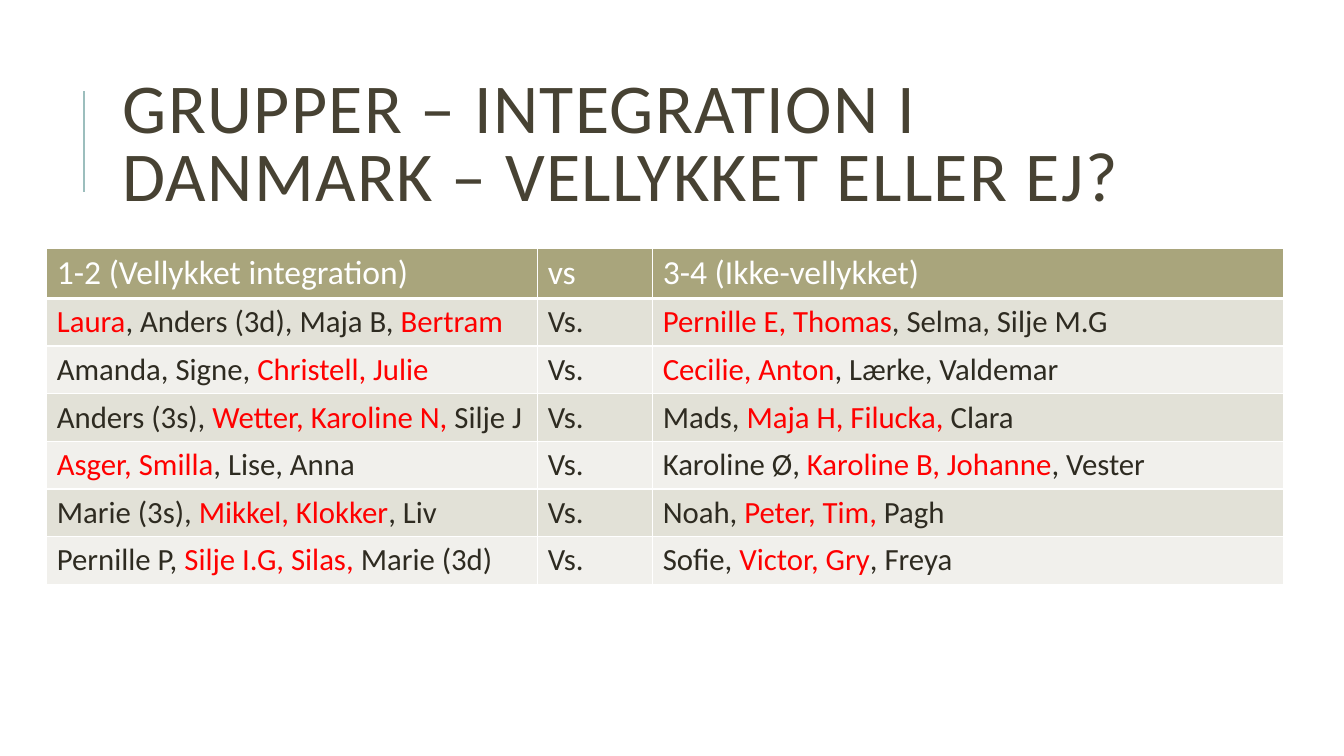
from lxml import etree
from pptx import Presentation
from pptx import util as u
from pptx.dml.color import RGBColor
from pptx.enum import shapes, text
from pptx.oxml import ns

TITLE = "GRUPPER – INTEGRATION I DANMARK – VELLYKKET ELLER EJ?"
HEADINGS = ["1-2 (Vellykket integration)", "vs", "3-4 (Ikke-vellykket)"]
MATCHES = [
    ("*Laura*, Anders (3d), Maja B, *Bertram*", "*Pernille E, Thomas*, Selma, Silje M.G"),
    ("Amanda, Signe, *Christell, Julie*", "*Cecilie, Anton*, Lærke, Valdemar"),
    ("Anders (3s), *Wetter, Karoline N, *Silje J", "Mads, *Maja H, Filucka, *Clara"),
    ("*Asger, Smilla*, Lise, Anna", "Karoline Ø, *Karoline B, Johanne*, Vester"),
    ("Marie (3s), *Mikkel, Klokker*, Liv", "Noah, *Peter, Tim,* Pagh"),
    ("Pernille P, *Silje I.G, Silas, *Marie (3d)", "Sofie, *Victor, Gry*, Freya"),
]


def color(value):
    return RGBColor.from_string(value)


def apply(target, formats):
    for name, value in formats.items():
        setattr(target, name, value)


class GroupSlide:
    font = "Calibri"
    title_color = "474233"
    rule_color = "9CBEBD"
    border_color = "FFFFFF"
    header_fill = "A9A57C"
    band_fills = ("E2E1D7", "F1F0EC")
    header_color = "FFFFFF"
    body_color = "2E2B21"
    highlight_color = "FF0000"

    def __init__(self, presentation):
        self.slide = presentation.slides.add_slide(presentation.slide_layouts[6])

    def add_run(self, paragraph, words, size, hue):
        run = paragraph.add_run()
        run.text = words
        apply(run.font, {"name": self.font, "size": u.Pt(size)})
        run.font.color.rgb = color(hue)
        return run

    def add_rule(self, x, top, bottom):
        rule = self.slide.shapes.add_connector(
            shapes.MSO_CONNECTOR.STRAIGHT, u.Cm(x), u.Cm(bottom), u.Cm(x), u.Cm(top))
        rule.line.width = u.Pt(1.5)
        rule.line.color.rgb = color(self.rule_color)
        etree.SubElement(rule._element.spPr, ns.qn("a:effectLst"))

    def add_title(self, words, left, top, width, height):
        box = self.slide.shapes.add_textbox(*map(u.Cm, (left, top, width, height)))
        apply(box.text_frame, {"word_wrap": True,
                               "vertical_anchor": text.MSO_ANCHOR.MIDDLE})
        paragraph = box.text_frame.paragraphs[0]
        paragraph.line_spacing = 0.8
        run = self.add_run(paragraph, words, 50, self.title_color)
        run.font._element.set("spc", "100")

    def add_borders(self, cell, bottom_width):
        properties = cell._tc.get_or_add_tcPr()
        for side, width in (("L", 1), ("R", 1), ("T", 1), ("B", bottom_width)):
            border = etree.SubElement(properties, ns.qn("a:ln" + side), w=str(u.Pt(width)))
            fill = etree.SubElement(border, ns.qn("a:solidFill"))
            etree.SubElement(fill, ns.qn("a:srgbClr"), val=self.border_color)

    def fill_cell(self, cell, words, size, hue, background, bottom_width):
        self.add_borders(cell, bottom_width)
        cell.fill.solid()
        cell.fill.fore_color.rgb = color(background)
        paragraph = cell.text_frame.paragraphs[0]
        for index, part in enumerate(words.split("*")):
            if part:
                self.add_run(paragraph, part, size, self.highlight_color if index % 2 else hue)

    def add_table(self, rows, left, top, widths, header_height, row_height):
        heights = [header_height] + [row_height] * (len(rows) - 1)
        frame = self.slide.shapes.add_table(
            len(rows), len(widths), u.Cm(left), u.Cm(top), u.Cm(sum(widths)), u.Cm(sum(heights)))
        table = frame.table
        for column, width in zip(table.columns, widths):
            column.width = u.Cm(width)
        for number, (row, height, entries) in enumerate(zip(table.rows, heights, rows)):
            row.height = u.Cm(height)
            if number == 0:
                style = (24, self.header_color, self.header_fill, 3)
            else:
                style = (22, self.body_color, self.band_fills[(number - 1) % 2], 1)
            for cell, words in zip(row.cells, entries):
                self.fill_cell(cell, words, *style)


def main():
    presentation = Presentation()
    apply(presentation, {"slide_width": u.Cm(33.87), "slide_height": u.Cm(19.05)})
    groups = GroupSlide(presentation)
    groups.add_rule(2.11, 2.29, 4.83)
    groups.add_title(TITLE, 2.84, 1.63, 27, 4.17)
    rows = [HEADINGS] + [[first, "Vs.", second] for first, second in MATCHES]
    groups.add_table(rows, 1.18, 6.25, (12.37, 2.9, 15.9), 1.27, 1.2)
    presentation.save("out.pptx")


if __name__ == "__main__":
    main()
